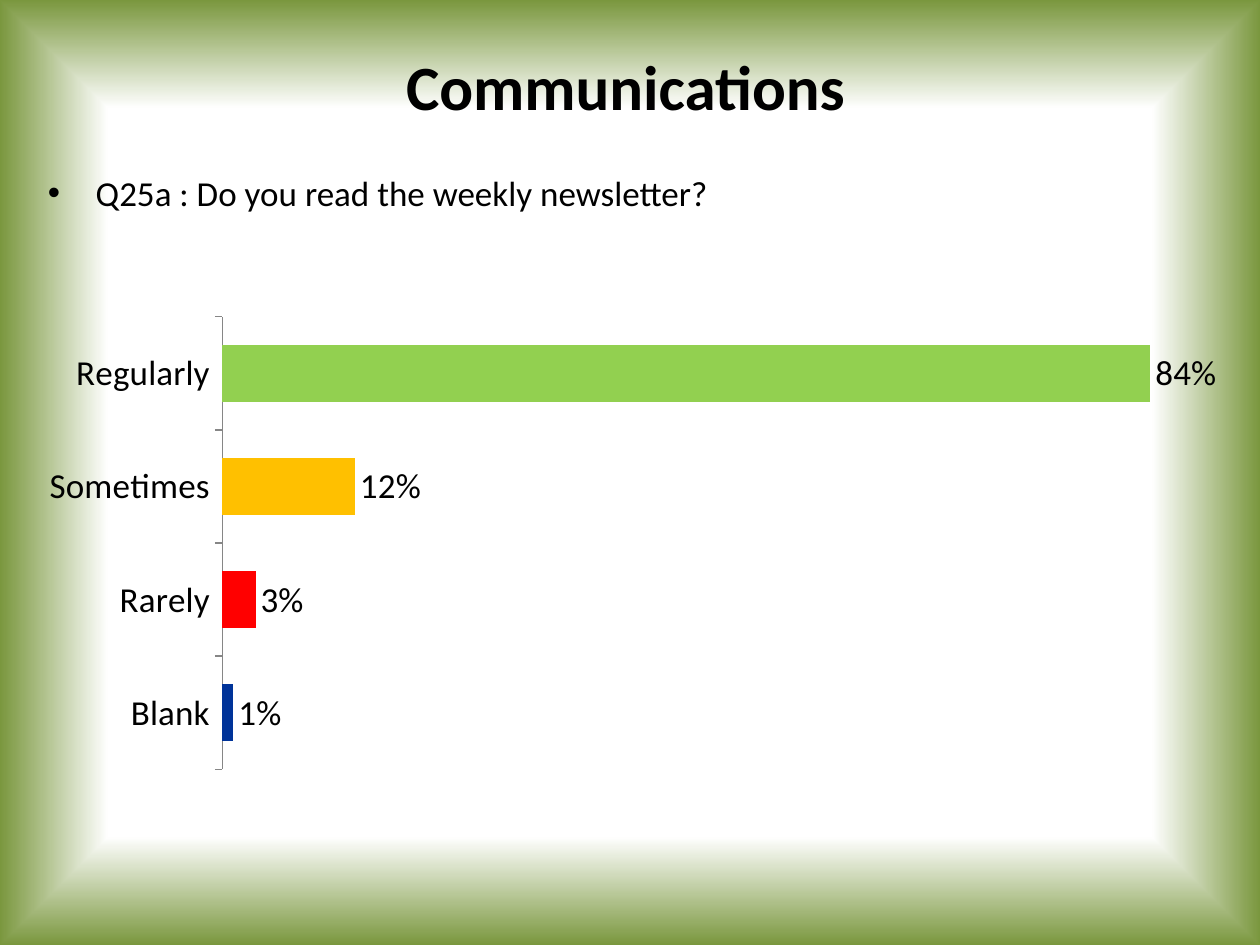
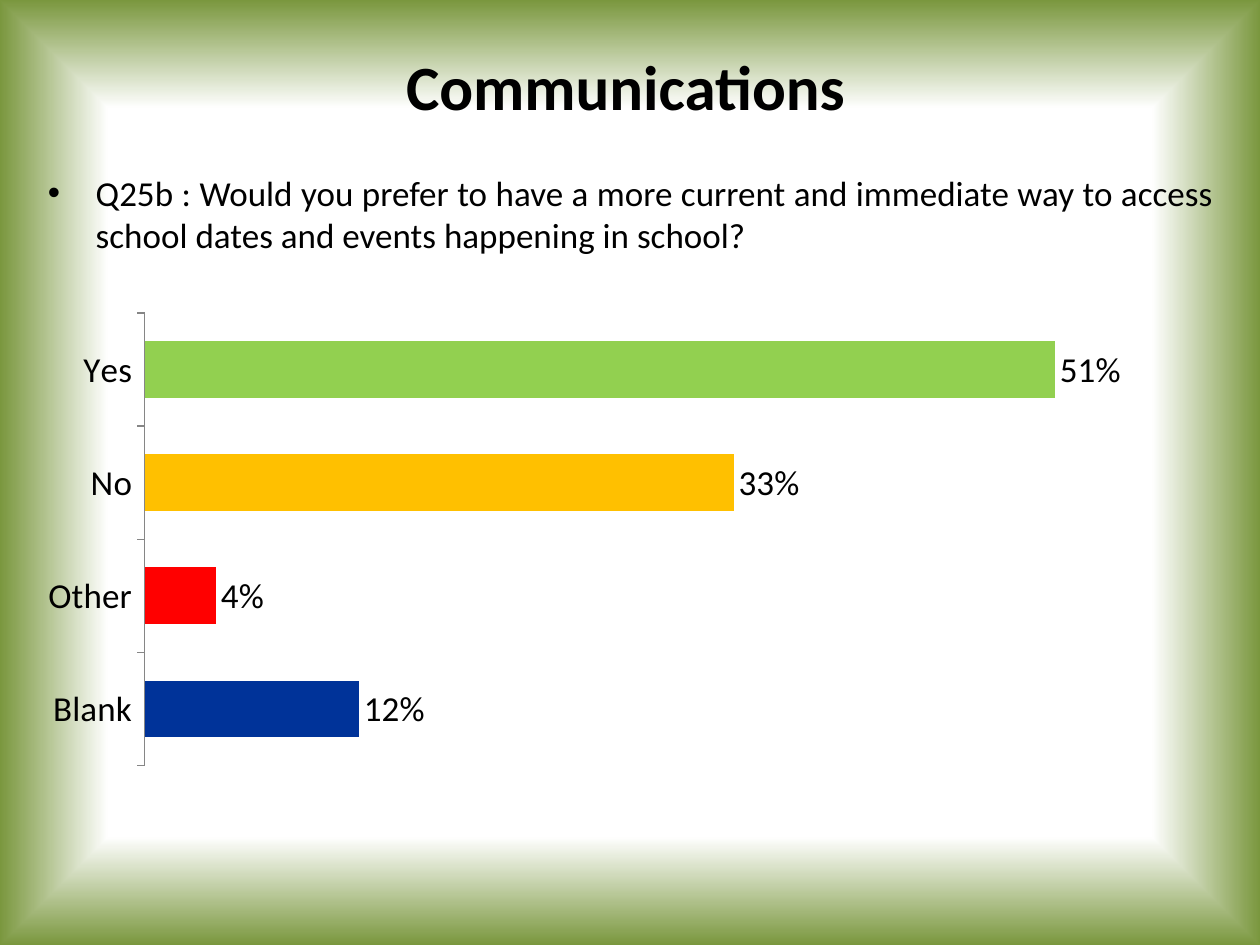
import pptx
import pptx.chart.data
import pptx.dml.color
import pptx.enum.chart
import pptx.enum.text
import pptx.oxml
import pptx.oxml.ns
import pptx.util
from dataclasses import dataclass

Inches = pptx.util.Inches
Pt = pptx.util.Pt
Color = pptx.dml.color.RGBColor.from_string
Align = pptx.enum.text.PP_ALIGN


@dataclass(frozen=True)
class Theme:
    font: str = "Calibri"
    title_size: int = 36
    text_size: int = 20
    text: str = "000000"
    center: str = "FFFFFF"
    edge: str = "7A973E"
    axis: str = "868686"
    series: str = "4F81BD"
    bars: tuple = ("003399", "FF0000", "FFC000", "92D050")


theme = Theme()


def style_font(font, size, bold=False):
    font.name = theme.font
    font.size = Pt(size)
    font.bold = bold
    font.color.rgb = Color(theme.text)


def place(item, left, top, width, height):
    item.left, item.top = Inches(left), Inches(top)
    item.width, item.height = Inches(width), Inches(height)


questions = [
    {
        "text": "Q25a : Do you read the weekly newsletter?",
        "align": Align.LEFT,
        "answers": {"Blank": 0.01, "Rarely": 0.03, "Sometimes": 0.12, "Regularly": 0.84},
        "chart_at": (0.2, 2.44),
    },
    {
        "text": "Q25b : Would you prefer to have a more current and immediate way "
                "to access school dates and events happening in school?",
        "align": Align.JUSTIFY,
        "answers": {"Blank": 0.12, "Other": 0.04, "No": 0.33, "Yes": 0.51},
        "chart_at": (0.19, 2.41),
    },
]

deck = pptx.Presentation()
deck.slide_width = Inches(10)
deck.slide_height = Inches(7.5)

fill = deck.slide_master.background.fill
fill.solid()
solid = deck.slide_master.element.find(".//" + pptx.oxml.ns.qn("p:bgPr"))[0]
solid.getparent().replace(solid, pptx.oxml.parse_xml(
    f'<a:gradFill {pptx.oxml.ns.nsdecls("a")} rotWithShape="1"><a:gsLst>'
    f'<a:gs pos="77000"><a:srgbClr val="{theme.center}"/></a:gs>'
    f'<a:gs pos="100000"><a:srgbClr val="{theme.edge}"/></a:gs></a:gsLst>'
    '<a:path path="shape"><a:fillToRect l="50000" t="50000" r="50000" b="50000"/></a:path>'
    '</a:gradFill>'))

for question in questions:
    page = deck.slides.add_slide(deck.slide_layouts[1])

    title = page.shapes.title
    place(title, 0.2, 0.13, 9.53, 1.1)
    para = title.text_frame.paragraphs[0]
    para.alignment = Align.CENTER
    span = para.add_run()
    span.text = "Communications"
    style_font(span.font, theme.title_size, bold=True)

    body = page.placeholders[1]
    place(body, 0.28, 1.31, 9.45, 5.67)
    para = body.text_frame.paragraphs[0]
    para.alignment = question["align"]
    para.space_before = Pt(0)
    settings = para._p.get_or_add_pPr()
    settings.set("marL", str(Inches(0.38)))
    settings.set("indent", str(Inches(-0.38)))
    span = para.add_run()
    span.text = question["text"]
    style_font(span.font, theme.text_size)

    answers = question["answers"]
    chart_data = pptx.chart.data.CategoryChartData(number_format="0%")
    chart_data.categories = list(answers)
    chart_data.add_series("Series 1", list(answers.values()))
    left, top = question["chart_at"]
    chart = page.shapes.add_chart(
        pptx.enum.chart.XL_CHART_TYPE.BAR_CLUSTERED,
        Inches(left), Inches(top), Inches(9.65), Inches(3.74), chart_data).chart
    style_font(chart.font, theme.text_size)
    chart.has_legend = False
    chart.has_title = False

    chart.value_axis.visible = False
    chart.value_axis.has_major_gridlines = False
    chart.value_axis.tick_labels.number_format = "0%"
    chart.value_axis.tick_labels.number_format_is_linked = False
    chart.category_axis.major_tick_mark = pptx.enum.chart.XL_TICK_MARK.OUTSIDE
    chart.category_axis.format.line.color.rgb = Color(theme.axis)
    chart.category_axis.format.line.width = Pt(0.75)

    plot = chart.plots[0]
    plot.gap_width = 100
    plot.vary_by_categories = False
    plot.has_data_labels = True
    labels = plot.data_labels
    labels.show_value = True
    labels.number_format = "0%"
    labels.number_format_is_linked = False
    labels.position = pptx.enum.chart.XL_LABEL_POSITION.OUTSIDE_END
    style_font(labels.font, theme.text_size)

    series = plot.series[0]
    series.format.fill.solid()
    series.format.fill.fore_color.rgb = Color(theme.series)
    for index, color in enumerate(theme.bars):
        bar = series.points[index].format.fill
        bar.solid()
        bar.fore_color.rgb = Color(color)

deck.save("out.pptx")
